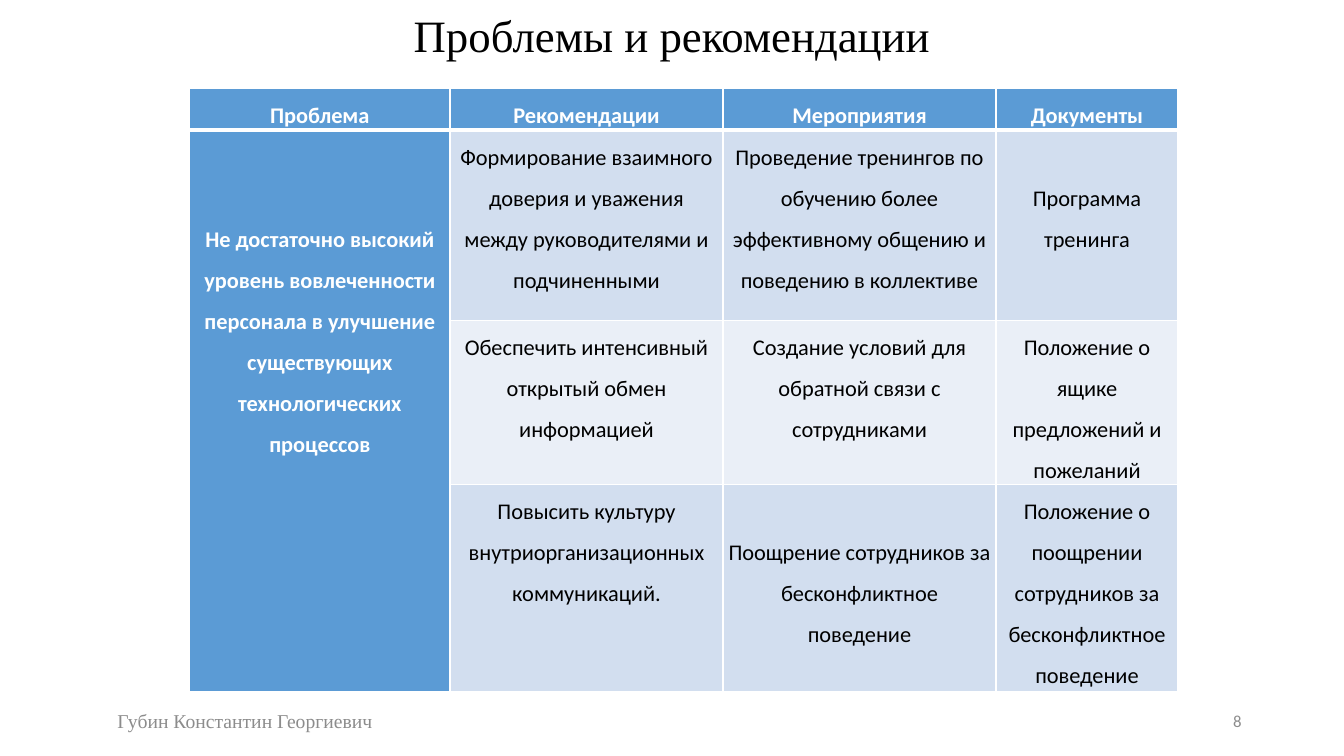
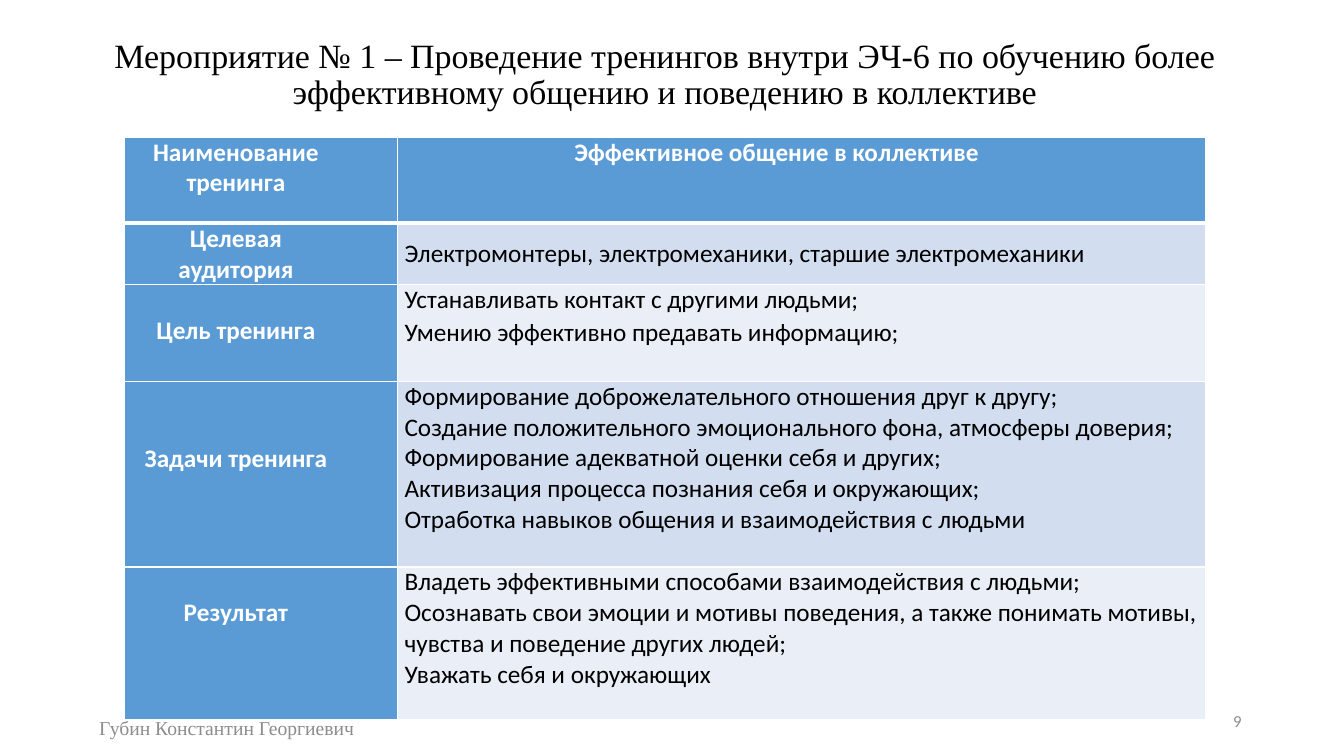
from lxml import etree
from pptx import Presentation
from pptx.dml.color import RGBColor
from pptx.enum.text import MSO_ANCHOR as Anchor, PP_ALIGN as Align
from pptx.oxml.ns import qn
from pptx.util import Pt

WHITE, BLACK, GREY = "FFFFFF", "000000", "8C8C8C"
HEADER_BLUE = "5B9BD5"
BANDS = ["D2DEEF", "EAEFF7"]
SERIF, SANS = "Times New Roman", "Calibri"
AUTHOR = "Губин Константин Георгиевич"

slides = [
    {
        "title": "Проблемы и рекомендации",
        "title_box": (66, 0, 828, 55), "title_size": 32,
        "author_at": (13, 500), "number": "8",
        "table_at": (135.5, 63), "columns": [186, 195, 195, 130],
        "heights": [30, 136, 117, 148],
        "size": 16, "spacing": 1.5, "line": 29.3, "inset": 3.6,
        "label_right": 3.6, "space_after": 0,
        "body_align": Align.CENTER, "merge_labels": True,
        "rows": [
            ["Проблема", "Рекомендации", "Мероприятия", "Документы"],
            ["Не достаточно высокий уровень вовлеченности персонала в улучшение "
             "существующих технологических процессов",
             "Формирование взаимного доверия и уважения между руководителями и подчиненными",
             "Проведение тренингов по обучению более эффективному общению и поведению в коллективе",
             "Программа тренинга"],
            ["", "Обеспечить интенсивный открытый обмен информацией",
             "Создание условий для обратной связи с сотрудниками",
             "Положение о ящике предложений и пожеланий"],
            ["", "Повысить культуру внутриорганизационных коммуникаций.",
             "Поощрение сотрудников за бесконфликтное поведение",
             "Положение о поощрении сотрудников за бесконфликтное поведение"],
        ],
        # (row, column): lines left free above the text
        "lines_above": {(1, 0): 2, (1, 3): 1, (3, 2): 1},
    },
    {
        "title": "Мероприятие № 1 – Проведение тренингов внутри ЭЧ-6 по обучению более "
                 "эффективному общению и поведению в коллективе",
        "title_box": (56, 25, 838, 58), "title_size": 24.3,
        "author_at": (0, 505), "number": "9",
        "table_at": (89, 98), "columns": [195, 577.5],
        "heights": [61.5, 44, 69, 132.5, 109],
        "size": 18, "spacing": 1, "line": 22, "inset": 5,
        "label_right": 41, "space_after": 1.5,
        "body_align": Align.LEFT, "merge_labels": False,
        "rows": [
            ["Наименование тренинга", "Эффективное общение в коллективе"],
            ["Целевая аудитория", "Электромонтеры, электромеханики, старшие электромеханики"],
            ["Цель тренинга",
             "Устанавливать контакт с другими людьми;\n"
             "Умению эффективно предавать информацию;"],
            ["Задачи тренинга",
             "Формирование доброжелательного отношения друг к другу;\n"
             "Создание положительного эмоционального фона, атмосферы доверия;\n"
             "Формирование адекватной оценки себя и других;\n"
             "Активизация процесса познания себя и окружающих;\n"
             "Отработка навыков общения и взаимодействия с людьми"],
            ["Результат",
             "Владеть эффективными способами взаимодействия с людьми;\n"
             "Осознавать свои эмоции и мотивы поведения, а также понимать мотивы, "
             "чувства и поведение других людей;\n"
             "Уважать себя и окружающих"],
        ],
        "lines_above": {(1, 1): 0.5, (2, 0): 1, (3, 0): 2, (4, 0): 1},
    },
]


def write(frame, text, size, font, color, align, bold=False, spacing=1.0, after=0):
    """Fill a text frame, one paragraph per line of text."""
    frame.word_wrap = True
    for index, line in enumerate(text.split("\n")):
        paragraph = frame.add_paragraph() if index else frame.paragraphs[0]
        paragraph.alignment = align
        paragraph.line_spacing = spacing
        paragraph.space_after = Pt(after)
        run = paragraph.add_run()
        run.text = line
        run.font.size, run.font.name, run.font.bold = Pt(size), font, bold
        run.font.color.rgb = RGBColor.from_string(color)


def add_border(cell, side, width):
    line = etree.SubElement(cell._tc.get_or_add_tcPr(), qn(f"a:ln{side}"), w=str(Pt(width)))
    fill = etree.SubElement(line, qn("a:solidFill"))
    etree.SubElement(fill, qn("a:srgbClr"), val=WHITE)


prs = Presentation()
prs.slide_width, prs.slide_height = Pt(960), Pt(540)

for content in slides:
    slide = prs.slides.add_slide(prs.slide_layouts[6])

    captions = [
        (content["title_box"], content["title"], content["title_size"], SERIF, BLACK, Align.CENTER, 0.9),
        ((*content["author_at"], 324, 29), AUTHOR, 14, SERIF, GREY, Align.CENTER, 1.0),
        ((678, 500, 216, 29), content["number"], 12, SANS, GREY, Align.RIGHT, 1.0),
    ]
    for box, text, size, font, color, align, spacing in captions:
        frame = slide.shapes.add_textbox(*map(Pt, box)).text_frame
        frame.vertical_anchor = Anchor.MIDDLE
        write(frame, text, size, font, color, align, spacing=spacing)

    rows, columns, heights = content["rows"], content["columns"], content["heights"]
    table = slide.shapes.add_table(
        len(rows), len(columns), *map(Pt, content["table_at"]),
        Pt(sum(columns)), Pt(sum(heights))).table
    for column, width in zip(table.columns, columns):
        column.width = Pt(width)
    for row, height in zip(table.rows, heights):
        row.height = Pt(height)
    if content["merge_labels"]:
        table.cell(1, 0).merge(table.cell(len(rows) - 1, 0))

    for r, row in enumerate(rows):
        for c, text in enumerate(row):
            cell = table.cell(r, c)
            label = r == 0 or c == 0
            for side in "LRTB":
                under_header = (r, side) in [(0, "B"), (1, "T")]
                add_border(cell, side, 3 if under_header else 1)
            cell.fill.solid()
            cell.fill.fore_color.rgb = RGBColor.from_string(
                HEADER_BLUE if label else BANDS[(r - 1) % 2])
            cell.margin_left = Pt(content["inset"])
            cell.margin_right = Pt(content["label_right"] if label else content["inset"])
            cell.margin_top = Pt(content["lines_above"].get((r, c), 0) * content["line"])
            cell.margin_bottom = 0
            if text:
                write(cell.text_frame, text, content["size"], SANS,
                      WHITE if label else BLACK,
                      Align.CENTER if label else content["body_align"],
                      bold=label, spacing=content["spacing"],
                      after=content["space_after"] if r == 2 else 0)

prs.save("out.pptx")
